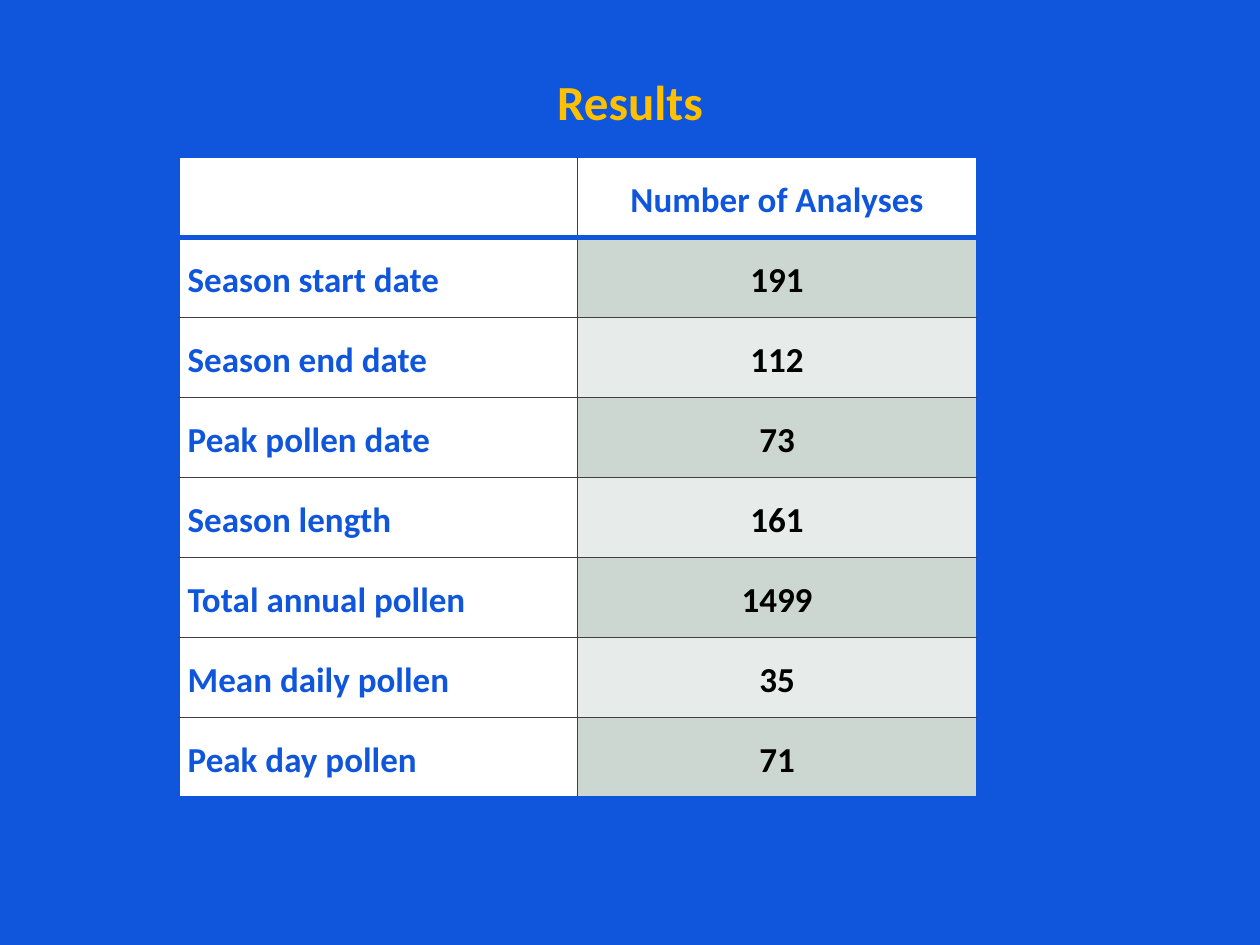
from dataclasses import dataclass

from lxml import etree
from pptx import Presentation
from pptx.dml.color import RGBColor
from pptx.enum.text import MSO_ANCHOR, PP_ALIGN
from pptx.oxml.ns import qn
from pptx.util import Inches, Pt

LEFT, CENTER = PP_ALIGN.LEFT, PP_ALIGN.CENTER
MIDDLE, BOTTOM = MSO_ANCHOR.MIDDLE, MSO_ANCHOR.BOTTOM


@dataclass(frozen=True)
class Theme:
    font: str = "Calibri"
    blue: str = "0F56DC"
    gold: str = "FFC000"
    white: str = "FFFFFF"
    black: str = "000000"
    grid: str = "404040"
    bands: tuple[str, str] = ("CCD7D1", "E7ECEA")
    title_size: int = 28
    table_size: int = 20


@dataclass(frozen=True)
class Border:
    color: str
    width: float


@dataclass(frozen=True)
class Measure:
    name: str
    analyses: int


THEME = Theme()
OUTER = Border(THEME.blue, 1)
HEADER_RULE = Border(THEME.blue, 3)
INNER = Border(THEME.grid, 0.5)

MEASURES = [
    Measure("Season start date", 191),
    Measure("Season end date", 112),
    Measure("Peak pollen date", 73),
    Measure("Season length", 161),
    Measure("Total annual pollen", 1499),
    Measure("Mean daily pollen", 35),
    Measure("Peak day pollen", 71),
]


def write(tf, text: str, size: int, color: str, align, spacing) -> None:
    p = tf.paragraphs[0]
    p.alignment = align
    p.line_spacing = spacing
    r = p.add_run()
    r.text = text
    r.font.name = THEME.font
    r.font.size = Pt(size)
    r.font.bold = True
    r.font.color.rgb = RGBColor.from_string(color)


def set_borders(cell, borders: dict[str, Border]) -> None:
    """Add cell lines, keyed by side in the order L, R, T, B."""
    tc_pr = cell._tc.get_or_add_tcPr()
    for side, border in borders.items():
        ln = etree.SubElement(tc_pr, qn(f"a:ln{side}"), w=str(Pt(border.width)))
        fill = etree.SubElement(ln, qn("a:solidFill"))
        etree.SubElement(fill, qn("a:srgbClr"), val=border.color)


def horizontal_rule(edge: int, row_count: int) -> Border:
    """Border for a row edge, counted from the top of the table."""
    if edge == 1:
        return HEADER_RULE
    return OUTER if edge in (0, row_count) else INNER


def add_title(slide, text: str) -> None:
    box = slide.shapes.add_textbox(Inches(0.5), Inches(0.3), Inches(9), Inches(0.78))
    tf = box.text_frame
    tf.word_wrap = True
    tf.vertical_anchor = BOTTOM
    write(tf, text, THEME.title_size, THEME.gold, CENTER, Pt(30))


def add_results_table(slide, measures: list[Measure]) -> None:
    rows = [("", "Number of Analyses")]
    rows += [(m.name, str(m.analyses)) for m in measures]
    count = len(rows)
    width, height = Inches(6.33), Inches(5.08)
    table = slide.shapes.add_table(
        count, 2, Inches(1.42), Inches(1.25), width, height).table
    table.first_row = False
    table.horz_banding = False
    for row in table.rows:
        row.height = height // count

    for i, texts in enumerate(rows):
        for j, text in enumerate(texts):
            cell = table.cell(i, j)
            is_value = i > 0 and j == 1
            set_borders(cell, {
                "L": INNER if j else OUTER,
                "R": OUTER if j else INNER,
                "T": horizontal_rule(i, count),
                "B": horizontal_rule(i + 1, count),
            })
            fill = THEME.bands[(i - 1) % 2] if is_value else THEME.white
            cell.fill.solid()
            cell.fill.fore_color.rgb = RGBColor.from_string(fill)
            cell.vertical_anchor = MIDDLE
            cell.margin_left = cell.margin_right = Inches(0.07)
            cell.margin_top = cell.margin_bottom = 0
            if text:
                write(cell.text_frame, text, THEME.table_size,
                      THEME.black if is_value else THEME.blue,
                      CENTER if j else LEFT, 1.15)


def main() -> None:
    prs = Presentation()
    prs.slide_width, prs.slide_height = Inches(10), Inches(7.5)
    s = prs.slides.add_slide(prs.slide_layouts[6])
    s.background.fill.solid()
    s.background.fill.fore_color.rgb = RGBColor.from_string(THEME.blue)
    add_title(s, "Results")
    add_results_table(s, MEASURES)
    prs.save("out.pptx")


if __name__ == "__main__":
    main()
